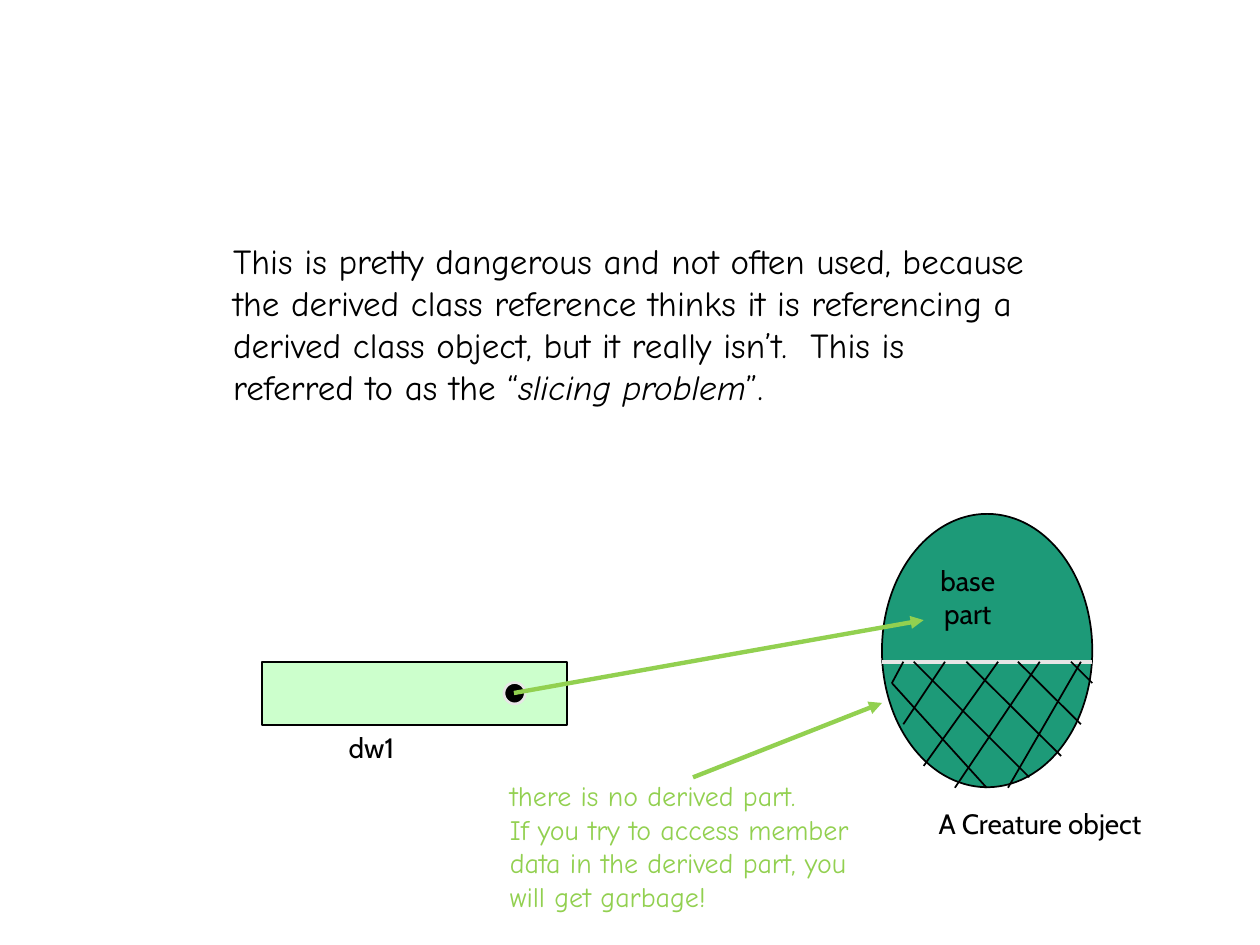
from lxml import etree
from pptx import Presentation
from pptx.dml.color import RGBColor
from pptx.enum.shapes import MSO_CONNECTOR, MSO_SHAPE
from pptx.enum.text import PP_ALIGN
from pptx.oxml.ns import qn
from pptx.util import Cm, Pt

BLACK = RGBColor(0x00, 0x00, 0x00)
TEAL = RGBColor(0x1D, 0x9A, 0x78)
MINT = RGBColor(0xCC, 0xFF, 0xCC)
LIME = RGBColor(0x92, 0xD0, 0x50)
GREY = RGBColor(0xE7, 0xE6, 0xE6)

prs = Presentation()
prs.slide_width, prs.slide_height = Cm(25.4), Cm(19.05)
slide = prs.slides.add_slide(prs.slide_layouts[6])
shapes = slide.shapes


def add_text(box, lines, font, size, color, align=PP_ALIGN.LEFT):
    frame = shapes.add_textbox(*map(Cm, box)).text_frame
    frame.word_wrap = True
    frame.text = "\n".join(lines)
    for paragraph in frame.paragraphs:
        paragraph.alignment = align
        paragraph.font.name = font
        paragraph.font.size = Pt(size)
        paragraph.font.color.rgb = color
    return frame


def add_line(start, end, color, width, arrow=False):
    line = shapes.add_connector(MSO_CONNECTOR.STRAIGHT, *map(Cm, start + end))
    line.line.color.rgb = color
    line.line.width = Pt(width)
    if arrow:
        etree.SubElement(line.line._get_or_add_ln(), qn("a:tailEnd"), type="triangle")
    etree.SubElement(line._element.spPr, qn("a:effectLst"))


explanation = add_text((4.45, 4.7, 18.64, 3.68), [
    "This is pretty dangerous and not often used, because",
    "the derived class reference thinks it is referencing a",
    "derived class object, but it really isn’t.  This is",
    "referred to as the “",
], "Comic Neue", 20, BLACK)
closing = explanation.paragraphs[-1]
term = closing.add_run()
term.text = "slicing problem"
term.font.italic = True
closing.add_run().text = "”."

outlines = [
    (MSO_SHAPE.OVAL, (17.78, 10.36, 4.24, 5.51), TEAL, BLACK, 1),
    (MSO_SHAPE.RECTANGLE, (5.28, 13.34, 6.15, 1.27), MINT, BLACK, 1),
    (MSO_SHAPE.OVAL, (10.16, 13.76, 0.43, 0.43), BLACK, GREY, 1.5),
]
for kind, box, fill, border, width in outlines:
    outline = shapes.add_shape(kind, *map(Cm, box))
    outline.shadow.inherit = False
    outline.fill.solid()
    outline.fill.fore_color.rgb = fill
    outline.line.color.rgb = border
    outline.line.width = Pt(width)

add_line((10.36, 13.97), (18.62, 12.5), LIME, 2.5, arrow=True)

divider = 13.34
add_line((17.78, divider), (22.02, divider), GREY, 2.5)
add_text((18.67, 11.23, 1.68, 1.63), ["base", "part"], "Cabin", 16, BLACK, PP_ALIGN.CENTER)

hatching = [
    (20.12, 18.62, 15.44), (20.96, 19.25, 15.88), (21.79, 20.32, 15.88),
    (19.05, 18.21, 14.6), (18.21, 17.98, 13.77),
    (19.48, 21.39, 15.24), (20.52, 21.79, 14.6), (21.59, 22.02, 13.77),
    (18.42, 20.75, 15.67),
]
for top_x, bottom_x, bottom_y in hatching:
    add_line((top_x, divider), (bottom_x, bottom_y), BLACK, 1)
add_line((17.98, 13.77), (19.89, 15.88), BLACK, 1)

add_text((18.67, 16.13, 5.44, 0.94), ["A Creature object"], "Cabin", 16, BLACK)
add_text((6.78, 14.6, 1.57, 0.94), ["dw1"], "Cabin", 16, BLACK)
add_text((10.03, 15.57, 8.05, 2.97), [
    "there is no derived part.",
    "If you try to access member",
    "data in the derived part, you",
    "will get garbage!",
], "Comic Neue", 16, LIME)
add_line((13.97, 15.67), (17.78, 14.17), LIME, 2.5, arrow=True)

prs.save("out.pptx")
